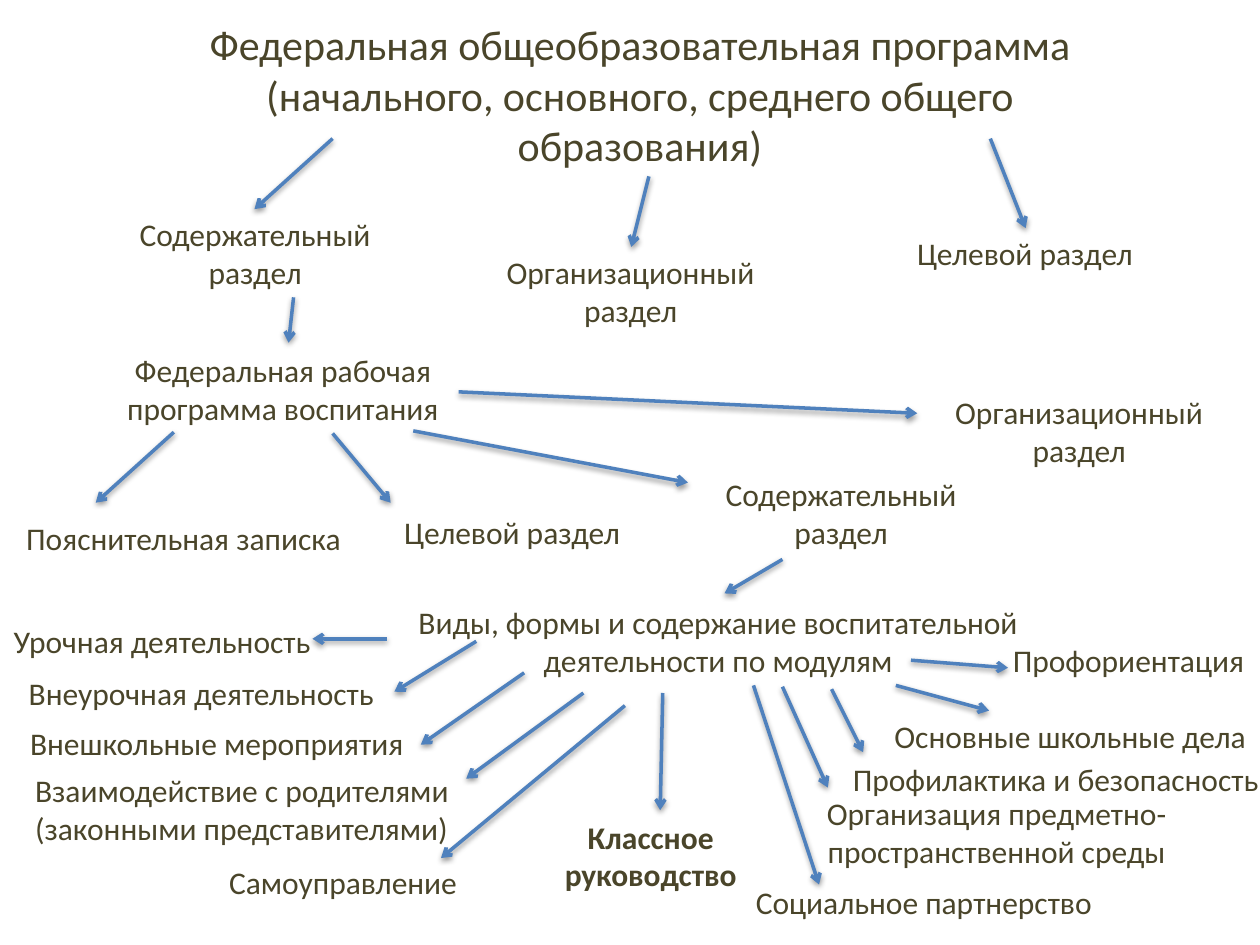
from dataclasses import dataclass

from lxml import etree
from pptx import Presentation
from pptx.dml.color import RGBColor
from pptx.enum import shapes, text
from pptx.oxml import ns
from pptx.util import Inches, Pt

TEXT_COLOR = RGBColor(0x4A, 0x45, 0x2A)
ARROW_COLOR = RGBColor(0x4F, 0x81, 0xBD)
CENTER, LEFT = text.PP_ALIGN.CENTER, text.PP_ALIGN.LEFT
ONE_LINE, TWO_LINES = 0.4, 0.71

SHADOW_XML = (
    f'<a:effectLst {ns.nsdecls("a")}>'
    '<a:outerShdw blurRad="40000" dist="20000" dir="5400000" rotWithShape="0">'
    '<a:srgbClr val="000000"><a:alpha val="38000"/></a:srgbClr>'
    '</a:outerShdw></a:effectLst>'
)


@dataclass(frozen=True)
class Label:
    lines: tuple[str, ...]
    left: float
    top: float
    width: float
    height: float = ONE_LINE
    align: text.PP_ALIGN = CENTER
    wrap: bool = True
    size: int = 18
    bold: bool = False


@dataclass(frozen=True)
class Arrow:
    x1: float
    y1: float
    x2: float
    y2: float


def module(name: str, left: float, top: float, width: float) -> Label:
    """A one-line, left-aligned name of an educational module."""
    return Label((name,), left, top, width, align=LEFT, wrap=False)


PROGRAM_LABELS = (
    Label(("Федеральная общеобразовательная программа",
           "(начального, основного, среднего общего образования)"),
          1.38, 0.1, 7.4, 1.31, size=24),
    Label(("Содержательный раздел",), 0.94, 1.66, 2.17, TWO_LINES),
    Label(("Организационный раздел",), 3.72, 1.96, 2.57, TWO_LINES),
    Label(("Целевой раздел",), 6.85, 1.81, 2.57),
)

UPBRINGING_LABELS = (
    Label(("Федеральная рабочая программа воспитания",), 0.79, 2.74, 2.91, TWO_LINES),
    Label(("Пояснительная записка",), 0.11, 4.07, 3.04, align=LEFT),
    Label(("Целевой раздел",), 2.78, 4.02, 2.57),
    Label(("Содержательный раздел",), 5.59, 3.72, 2.17, TWO_LINES),
    Label(("Организационный раздел",), 7.28, 3.07, 2.57, TWO_LINES),
)

MODULE_LABELS = (
    Label(("Виды, формы и содержание воспитательной деятельности по модулям",),
          3.2, 4.74, 5, TWO_LINES),
    module("Урочная деятельность", 0.01, 4.89, 2.59),
    module("Внеурочная деятельность", 0.13, 5.3, 2.97),
    module("Внешкольные мероприятия", 0.14, 5.7, 3.2),
    Label(("Взаимодействие с родителями", "(законными представителями)"),
          0.18, 6.07, 3.6, TWO_LINES, align=LEFT),
    module("Самоуправление", 1.72, 6.8, 2.03),
    Label(("Классное", "руководство"), 4.38, 6.44, 1.57, TWO_LINES,
          wrap=False, bold=True),
    module("Социальное партнерство", 5.9, 6.96, 2.9),
    Label(("Организация предметно-пространственной среды",),
          6.37, 6.25, 3.08, TWO_LINES),
    module("Профилактика и безопасность", 6.67, 5.98, 3.46),
    module("Основные школьные дела", 7, 5.64, 3.02),
    module("Профориентация", 7.94, 5.04, 2.06),
)

PROGRAM_ARROWS = (
    Arrow(2.64, 1.1, 2.02, 1.66),
    Arrow(5.15, 1.4, 5.01, 1.96),
    Arrow(7.86, 1.1, 8.14, 1.81),
    Arrow(2.33, 2.36, 2.29, 2.72),
)

UPBRINGING_ARROWS = (
    Arrow(1.38, 3.43, 0.76, 3.99),
    Arrow(2.64, 3.44, 3.1, 3.99),
    Arrow(3.28, 3.42, 5.46, 3.83),
    Arrow(3.64, 3.11, 7.28, 3.28),
    Arrow(6.21, 4.44, 5.75, 4.71),
)

MODULE_ARROWS = (
    Arrow(3.07, 5.07, 2.48, 5.07),
    Arrow(3.78, 5.09, 3.13, 5.49),
    Arrow(4.16, 5.34, 3.34, 5.91),
    Arrow(4.63, 5.5, 3.7, 6.18),
    Arrow(4.96, 5.6, 3.5, 6.81),
    Arrow(5.26, 5.5, 5.24, 6.43),
    Arrow(5.98, 5.44, 6.5, 7.02),
    Arrow(6.21, 5.45, 6.57, 6.25),
    Arrow(6.6, 5.47, 6.85, 5.97),
    Arrow(7.11, 5.44, 7.85, 5.64),
    Arrow(7.23, 5.24, 8, 5.3),
)


def draw_label(slide, label: Label) -> None:
    box = slide.shapes.add_textbox(Inches(label.left), Inches(label.top),
                                   Inches(label.width), Inches(label.height))
    frame = box.text_frame
    frame.word_wrap = label.wrap
    frame.auto_size = text.MSO_AUTO_SIZE.SHAPE_TO_FIT_TEXT
    font_format = {"name": "Calibri", "size": Pt(label.size), "bold": label.bold}
    for index, line in enumerate(label.lines):
        paragraph = frame.add_paragraph() if index else frame.paragraphs[0]
        paragraph.alignment = label.align
        run = paragraph.add_run()
        run.text = line
        for attribute, value in font_format.items():
            setattr(run.font, attribute, value)
        run.font.color.rgb = TEXT_COLOR


def draw_arrow(slide, arrow: Arrow) -> None:
    connector = slide.shapes.add_connector(
        shapes.MSO_CONNECTOR.STRAIGHT, Inches(arrow.x1), Inches(arrow.y1),
        Inches(arrow.x2), Inches(arrow.y2))
    connector.line.color.rgb = ARROW_COLOR
    connector.line.width = Pt(2)
    outline = connector.line._get_or_add_ln()
    etree.SubElement(outline, ns.qn("a:tailEnd"), type="arrow")
    connector._element.spPr.append(etree.fromstring(SHADOW_XML))


def main() -> None:
    deck = Presentation()
    deck.slide_width, deck.slide_height = Inches(10), Inches(7.5)
    slide = deck.slides.add_slide(deck.slide_layouts[6])
    for label in PROGRAM_LABELS + UPBRINGING_LABELS + MODULE_LABELS:
        draw_label(slide, label)
    for arrow in PROGRAM_ARROWS + UPBRINGING_ARROWS + MODULE_ARROWS:
        draw_arrow(slide, arrow)
    deck.save("out.pptx")


if __name__ == "__main__":
    main()
